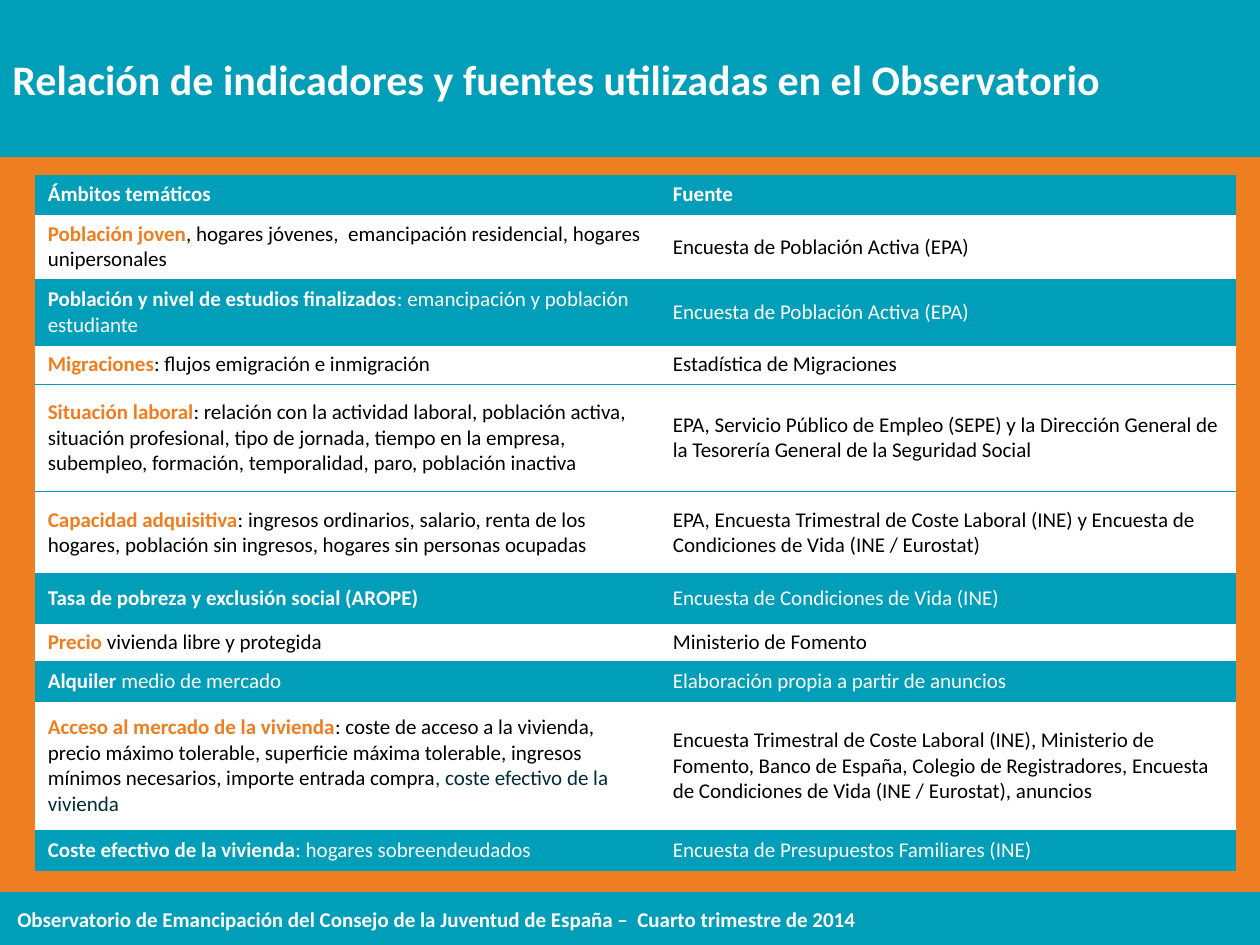
"""Build the slide listing the indicators and sources of the Observatorio."""
from lxml import etree
from pptx import Presentation
from pptx.dml.color import RGBColor
from pptx.enum.shapes import MSO_SHAPE
from pptx.enum.text import MSO_ANCHOR, PP_ALIGN
from pptx.oxml import parse_xml
from pptx.util import Cm, Pt

RECT = MSO_SHAPE.RECTANGLE
MIDDLE = MSO_ANCHOR.MIDDLE
LEFT = PP_ALIGN.LEFT
TEAL = RGBColor(0x00, 0x9E, 0xB8)
ORANGE = RGBColor(0xEE, 0x7E, 0x1F)
WHITE = RGBColor(0xFF, 0xFF, 0xFF)
BLACK = RGBColor(0x00, 0x00, 0x00)
NAVY = RGBColor(0x00, 0x2C, 0x3A)
NS = "http://schemas.openxmlformats.org/drawingml/2006/main"
PLAIN = "{2D5ABB26-0587-4C30-8999-92F81FD0307C}"
RULE = (f'<a:lnB xmlns:a="{NS}" w="12700"><a:solidFill>'
        f'<a:srgbClr val="{TEAL}"/></a:solidFill></a:lnB>')

ROWS = [
    (0.79, TEAL, "Ámbitos temáticos", "", "", "Fuente"),
    (1.32, WHITE, "Población joven",
     ", hogares jóvenes,  emancipación residencial, hogares unipersonales", "",
     "Encuesta de Población Activa (EPA)"),
    (1.32, TEAL, "Población y nivel de estudios finalizados",
     ": emancipación y población estudiante", "",
     "Encuesta de Población Activa (EPA)"),
    (0.79, WHITE, "Migraciones", ": flujos emigración e inmigración", "",
     "Estadística de Migraciones"),
    (2.16, WHITE, "Situación laboral",
     ": relación con la actividad laboral, población activa, situación "
     "profesional, tipo de jornada, tiempo en la empresa, subempleo, "
     "formación, temporalidad, paro, población inactiva", "",
     "EPA, Servicio Público de Empleo (SEPE) y la Dirección General de la "
     "Tesorería General de la Seguridad Social"),
    (1.66, WHITE, "Capacidad adquisitiva",
     ": ingresos ordinarios, salario, renta de los hogares, población sin "
     "ingresos, hogares sin personas ocupadas", "",
     "EPA, Encuesta Trimestral de Coste Laboral (INE) y Encuesta de "
     "Condiciones de Vida (INE / Eurostat)"),
    (1, TEAL, "Tasa de pobreza y exclusión social (AROPE)", "", "",
     "Encuesta de Condiciones de Vida (INE)"),
    (0.77, WHITE, "Precio ", "vivienda libre y protegida", "",
     "Ministerio de Fomento"),
    (0.79, TEAL, "Alquiler", " medio de mercado", "",
     "Elaboración propia a partir de anuncios"),
    (2.62, WHITE, "Acceso al mercado de la vivienda",
     ": coste de acceso a la vivienda, precio máximo tolerable, superficie "
     "máxima tolerable, ingresos mínimos necesarios, importe entrada compra",
     ", coste efectivo de la vivienda",
     "Encuesta Trimestral de Coste Laboral (INE), Ministerio de Fomento, "
     "Banco de España, Colegio de Registradores, Encuesta de Condiciones de "
     "Vida (INE / Eurostat), anuncios"),
    (0.79, TEAL, "Coste efectivo de la vivienda",
     ": hogares sobreendeudados", "",
     "Encuesta de Presupuestos Familiares (INE)"),
]


def add_run(para, text, color, bold, size=12):
    run = para.add_run()
    run.text = text
    run.font.name = "Calibri"
    run.font.size = Pt(size)
    run.font.bold = bold
    run.font.color.rgb = color


def add_band(top, height):
    band = slide.shapes.add_shape(RECT, 0, Cm(top), Cm(25.4), Cm(height))
    band.shadow.inherit = False
    band.fill.solid()
    band.fill.fore_color.rgb = TEAL
    band.line.fill.background()
    return band


prs = Presentation()
prs.slide_width, prs.slide_height = Cm(25.4), Cm(19.05)
slide = prs.slides.add_slide(prs.slide_layouts[6])
slide.background.fill.solid()
slide.background.fill.fore_color.rgb = ORANGE

add_band(17.98, 1.07)
foot = slide.shapes.add_textbox(Cm(0.1), Cm(18.16), Cm(19.6), Cm(0.77)).text_frame
foot.word_wrap = True
add_run(foot.paragraphs[0],
        "Observatorio de Emancipación del Consejo de la Juventud de España –  "
        "Cuarto trimestre de 2014", WHITE, True)

title = add_band(0, 3.17).text_frame
title.word_wrap = True
title.vertical_anchor = MIDDLE
title.paragraphs[0].alignment = LEFT
add_run(title.paragraphs[0],
        "Relación de indicadores y fuentes utilizadas en el Observatorio",
        WHITE, True, 24)

total = sum(row[0] for row in ROWS)
table = slide.shapes.add_table(len(ROWS), 2, Cm(0.71), Cm(3.53),
                               Cm(24.2), Cm(total)).table
table.first_row = table.horz_banding = False
table._tbl.tblPr.find(etree.QName(NS, "tableStyleId")).text = PLAIN
table.columns[0].width, table.columns[1].width = Cm(12.6), Cm(11.6)

for i, (height, fill, head, body, tail, source) in enumerate(ROWS):
    table.rows[i].height = Cm(height)
    key, ink = (WHITE, WHITE) if fill == TEAL else (ORANGE, BLACK)
    topic = [(head, key, True), (body, ink, False), (tail, NAVY, False)]
    for j, runs in enumerate((topic, [(source, ink, i == 0)])):
        cell = table.cell(i, j)
        cell.vertical_anchor = MIDDLE
        cell.fill.solid()
        cell.fill.fore_color.rgb = fill
        cell._tc.tcPr.insert(0, parse_xml(RULE))
        for text, color, bold in runs:
            if text:
                add_run(cell.text_frame.paragraphs[0], text, color, bold)

prs.save("out.pptx")
